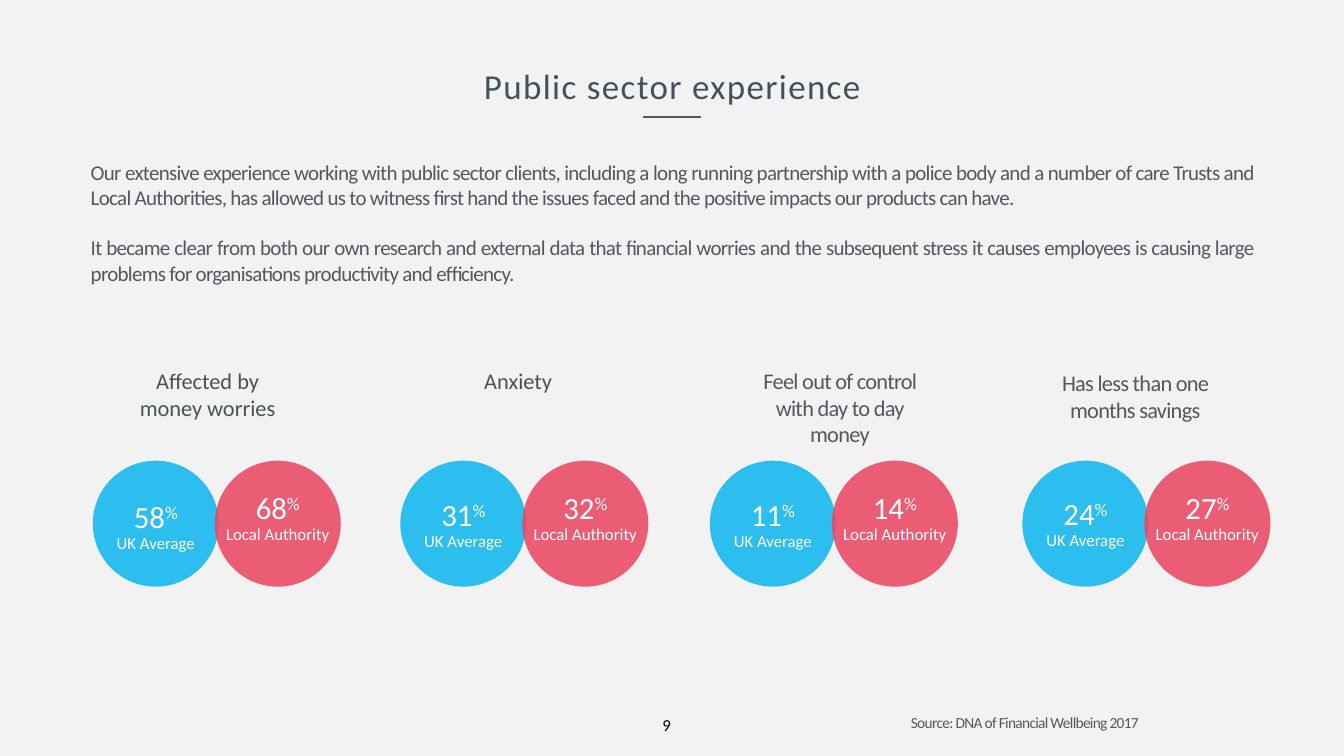
"""Builds the public sector experience slide with four pairs of percentage circles."""
from lxml.etree import SubElement
from pptx import Presentation
from pptx.dml.color import RGBColor
from pptx.enum.shapes import MSO_CONNECTOR, MSO_SHAPE
from pptx.enum.text import MSO_ANCHOR, MSO_AUTO_SIZE, PP_ALIGN
from pptx.oxml.ns import qn
from pptx.util import Inches, Pt

BACKGROUND = RGBColor(0xF2, 0xF2, 0xF2)
GREY = RGBColor(0x53, 0x58, 0x5F)
TITLE_GREY = RGBColor(0x43, 0x52, 0x5A)
HEADING_GREY = RGBColor(0x48, 0x51, 0x56)
BLUE = RGBColor(0x17, 0xB9, 0xEE)
PINK = RGBColor(0xE9, 0x49, 0x64)
WHITE = RGBColor(0xFF, 0xFF, 0xFF)
BLACK = RGBColor(0, 0, 0)


def add_run(paragraph, text, size, color, spacing=0, baseline=0):
    run = paragraph.add_run()
    run.text = text
    run.font.name = "Calibri"
    run.font.size = Pt(size)
    run.font.color.rgb = color
    properties = run._r.get_or_add_rPr()
    if spacing:
        properties.set("spc", str(int(spacing * 100)))
    if baseline:
        properties.set("baseline", str(baseline * 1000))


def set_frame(shape, left, top, width, height, side=0.1, upper=0.05, wrap=True):
    shape.left, shape.top = Inches(left), Inches(top)
    shape.width, shape.height = Inches(width), Inches(height)
    frame = shape.text_frame
    frame.word_wrap = wrap
    frame.auto_size = MSO_AUTO_SIZE.NONE
    frame.vertical_anchor = MSO_ANCHOR.TOP
    frame.margin_left = frame.margin_right = Inches(side)
    frame.margin_top = frame.margin_bottom = Inches(upper)
    return frame


presentation = Presentation()
presentation.slide_width = Inches(13.33)
presentation.slide_height = Inches(7.5)
slide = presentation.slides.add_slide(presentation.slide_layouts[1])
slide.background.fill.solid()
slide.background.fill.fore_color.rgb = BACKGROUND
shapes = slide.shapes

title = set_frame(shapes.title, 3.25, 0.69, 6.84, 0.4, side=0, upper=0).paragraphs[0]
title.alignment = PP_ALIGN.CENTER
title.line_spacing = 0.9
add_run(title, "Public sector experience", 25, TITLE_GREY, spacing=1)

INTRODUCTION = [
    "Our extensive experience working with public sector clients, including a long running "
    "partnership with a police body and a number of care Trusts and Local Authorities, has allowed us "
    "to witness first hand the issues faced and the positive impacts our products can have.",
    "It became clear from both our own research and external data that financial worries and the "
    "subsequent stress it causes employees is causing large problems for organisations "
    "productivity and efficiency.",
]
introduction = set_frame(slide.placeholders[1], 0.84, 1.52, 11.66, 1.6, side=0.06, upper=0.06)
for index, statement in enumerate(INTRODUCTION):
    paragraph = introduction.paragraphs[0] if index == 0 else introduction.add_paragraph()
    properties = paragraph._p.get_or_add_pPr()
    properties.set("marL", "0")
    properties.set("indent", "0")
    SubElement(properties, qn("a:buNone"))
    paragraph.alignment = PP_ALIGN.JUSTIFY
    paragraph.space_before = Pt(18 * index)
    add_run(paragraph, statement, 15, GREY, spacing=-0.5)

underline = shapes.add_connector(
    MSO_CONNECTOR.STRAIGHT, Inches(6.38), Inches(1.16), Inches(6.95), Inches(1.16))
underline.line.color.rgb = GREY
underline.line.width = Pt(1)
SubElement(underline._element.spPr, qn("a:effectLst"))

COLUMNS = [
    (0.92, "Affected by money worries", (1.18, 3.59, 1.76), HEADING_GREY, 0, 58, 4.93, 68),
    (3.97, "Anxiety", (4.26, 3.59, 1.76), HEADING_GREY, 0, 31, 4.91, 32),
    (7.04, "Feel out of control with day to day money", (7.37, 3.59, 1.92), GREY, -0.5, 11, 4.91, 14),
    (10.14, "Has less than one months savings", (10.38, 3.61, 1.76), GREY, -0.5, 24, 4.9, 27),
]
DIAMETER = 1.25
for left, topic, topic_place, topic_color, spacing, average, average_top, authority in COLUMNS:
    topic_box = shapes.add_textbox(0, 0, 0, 0)
    heading = set_frame(topic_box, *topic_place, 0.89).paragraphs[0]
    heading.alignment = PP_ALIGN.CENTER
    add_run(heading, topic, 16, topic_color, spacing)

    groups = [
        (left, average_top, average, "UK Average", BLUE, 90),
        (left + 1.21, 4.84, authority, "Local Authority", PINK, 88),
    ]
    for circle_left, figure_top, percentage, group, color, opacity in groups:
        circle = shapes.add_shape(MSO_SHAPE.OVAL, Inches(circle_left), Inches(4.57),
                                  Inches(DIAMETER), Inches(DIAMETER))
        circle.shadow.inherit = False
        circle.line.fill.background()
        circle.fill.solid()
        circle.fill.fore_color.rgb = color
        shade = circle._element.spPr.find(qn("a:solidFill"))[0]
        SubElement(shade, qn("a:alpha"), val=str(opacity * 1000))

        figure_box = shapes.add_textbox(0, 0, 0, 0)
        figure = set_frame(figure_box, circle_left, figure_top, DIAMETER, 0.6, side=0).paragraphs[0]
        figure.alignment = PP_ALIGN.CENTER
        figure.line_spacing = 0.9
        add_run(figure, str(percentage), 22, WHITE)
        add_run(figure, "%", 22, WHITE, baseline=30)
        figure.add_line_break()
        add_run(figure, group, 12, WHITE)

page_number = set_frame(shapes.add_textbox(0, 0, 0, 0), 6.51, 7.03, 0.31, 0.3,
                        side=0.06, upper=0.06, wrap=False).paragraphs[0]
add_run(page_number, "9", 12, BLACK)

source = set_frame(shapes.add_textbox(0, 0, 0, 0), 8.83, 7.02, 2.67, 0.3,
                   side=0.06, upper=0.06, wrap=False)
source.vertical_anchor = MSO_ANCHOR.MIDDLE
source.paragraphs[0].alignment = PP_ALIGN.CENTER
add_run(source.paragraphs[0], "Source: DNA of Financial Wellbeing 2017", 11, GREY, spacing=-0.5)

presentation.save("out.pptx")
